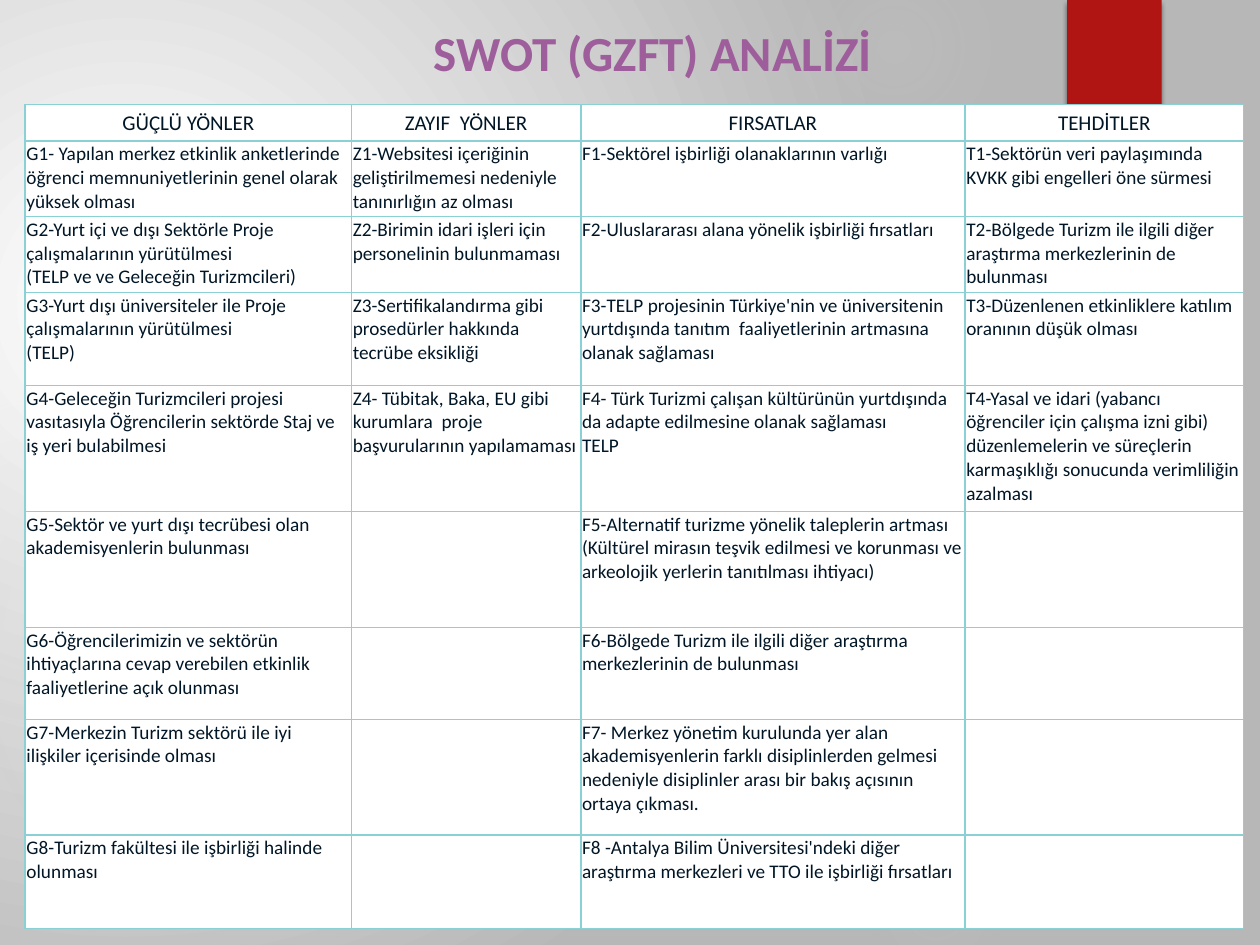
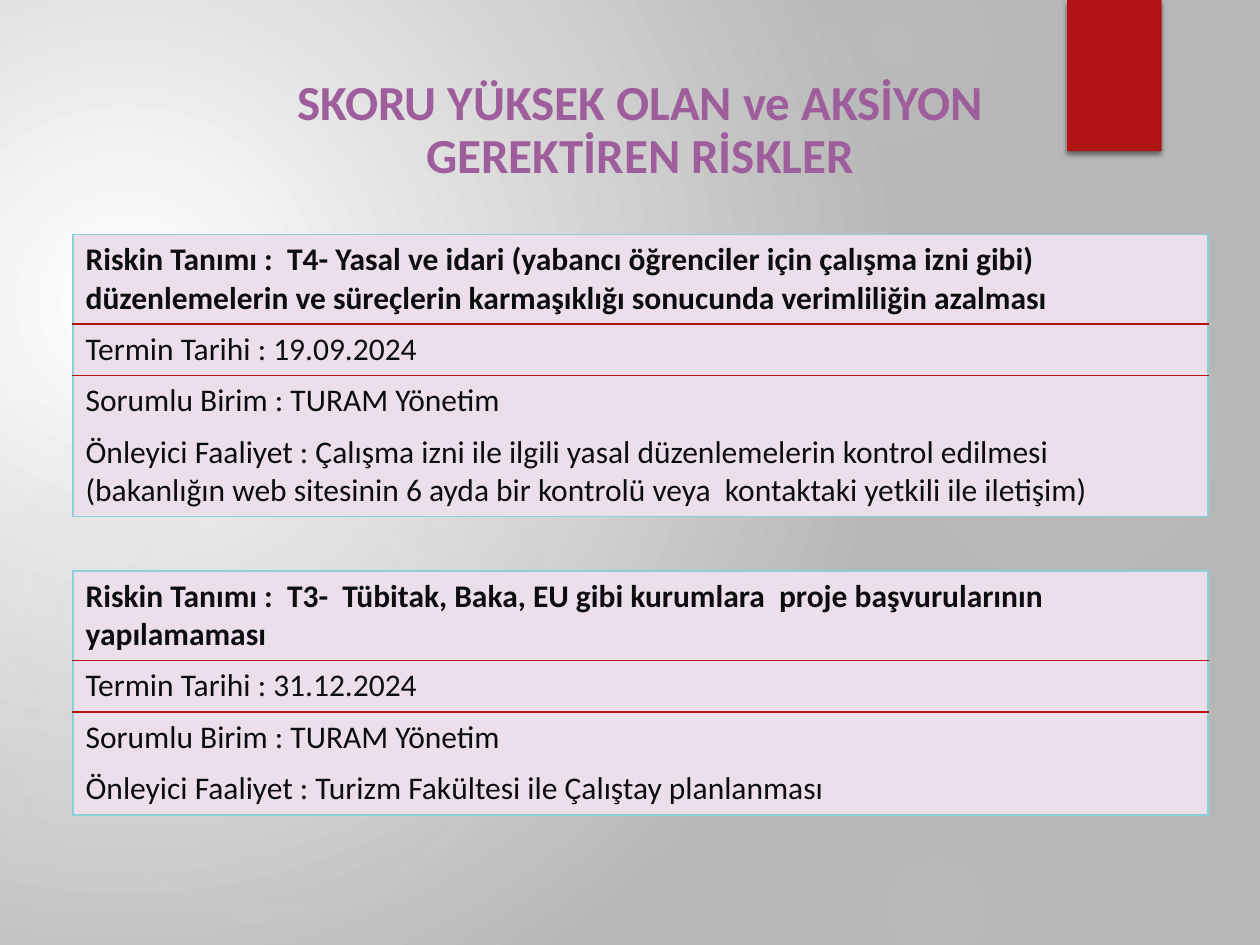
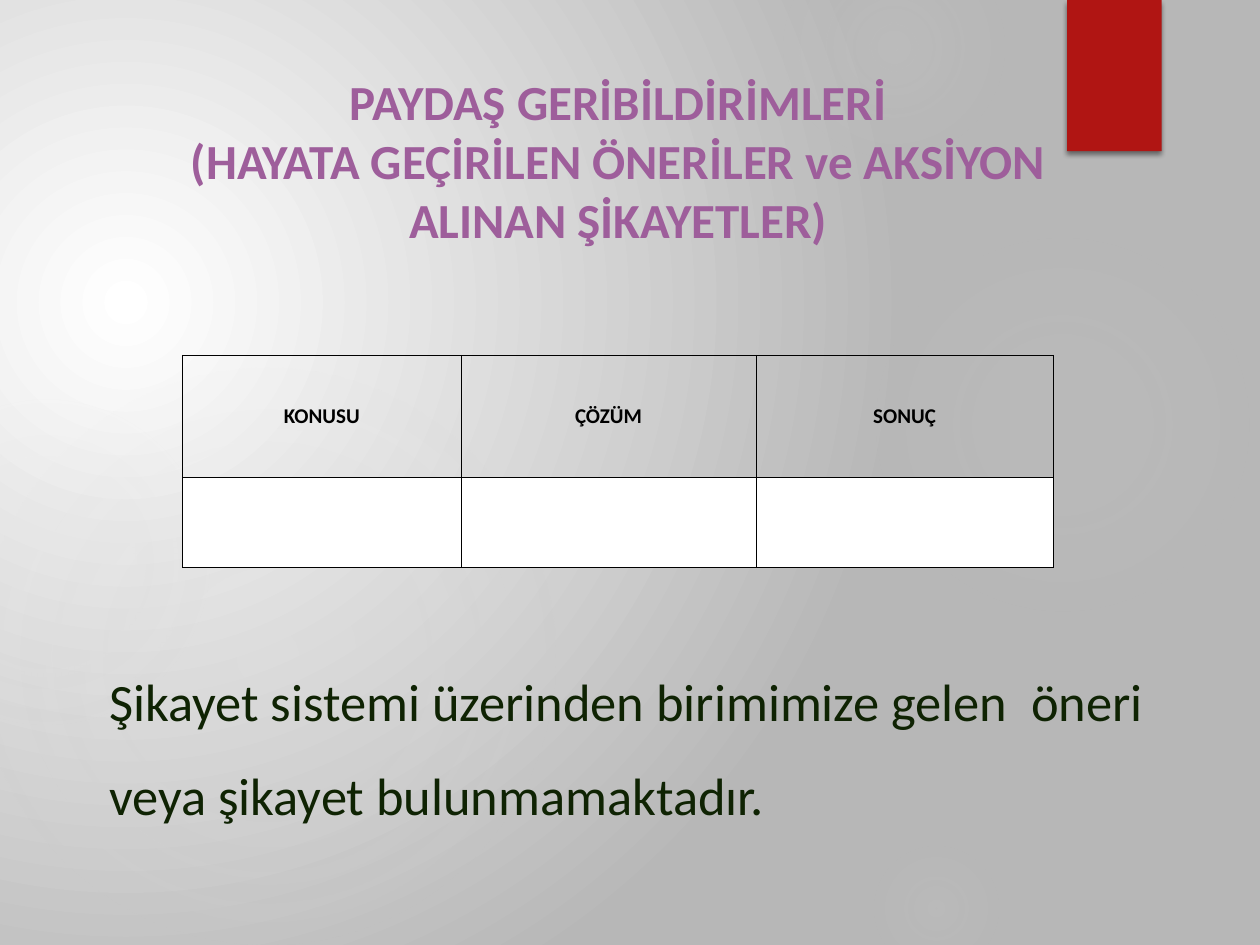
import pptx
import pptx.util
import pptx.dml.color
import pptx.enum.shapes
import pptx.enum.text
import pptx.oxml
from pptx.oxml.ns import nsdecls, qn

Inches, Pt = pptx.util.Inches, pptx.util.Pt
ANCHOR = pptx.enum.text.MSO_ANCHOR
ALIGN = pptx.enum.text.PP_ALIGN
SHAPE = pptx.enum.shapes.MSO_SHAPE

FONT = "Calibri"
PURPLE, RED, CYAN, LILAC = "9E5E9B", "B01513", "8AD0D5", "ECDFEB"
WHITE, BLACK, GREY, HALO = "FFFFFF", "000000", "B7B7B7", "D9D9D9"
NAVY, INK, GREEN = "001626", "0C0D0D", "0F2303"
NO_STYLE = "{2D5ABB26-0587-4C30-8999-92F81FD0307C}"

# left, top, diameter, stops as (position, opacity)
HALOS = [
    (6.89, 1.83, 3.08, [(0, 7), (36, 6), (69, 0)]),
    (6.22, -0.5, 1.75, [(0, 14), (36, 7), (73, 0)]),
    (6.89, 6.67, 1.08, [(0, 9), (36, 5), (66, 0)]),
    (-0.17, 2.92, 4.58, [(0, 11), (36, 10), (75, 0)]),
    (-0.92, 3.17, 2.58, [(0, 8), (36, 8), (72, 0)]),
]

SWOT_HEADS = ["GÜÇLÜ YÖNLER", "ZAYIF  YÖNLER", "FIRSATLAR", "TEHDİTLER"]
SWOT_COLUMNS = [
    ["G1- Yapılan merkez etkinlik anketlerinde öğrenci memnuniyetlerinin genel olarak yüksek olması",
     "G2-Yurt içi ve dışı Sektörle Proje çalışmalarının yürütülmesi\v(TELP ve ve Geleceğin Turizmcileri)",
     "G3-Yurt dışı üniversiteler ile Proje çalışmalarının yürütülmesi\v(TELP)",
     "G4-Geleceğin Turizmcileri projesi vasıtasıyla Öğrencilerin sektörde Staj ve iş yeri bulabilmesi",
     "G5-Sektör ve yurt dışı tecrübesi olan  akademisyenlerin bulunması",
     "G6-Öğrencilerimizin ve sektörün ihtiyaçlarına cevap verebilen etkinlik faaliyetlerine açık olunması",
     "G7-Merkezin Turizm sektörü ile iyi ilişkiler içerisinde olması",
     "G8-Turizm fakültesi ile işbirliği halinde olunması"],
    ["Z1-Websitesi içeriğinin geliştirilmemesi nedeniyle tanınırlığın az olması",
     "Z2-Birimin idari işleri için personelinin bulunmaması",
     "Z3-Sertifikalandırma gibi prosedürler hakkında tecrübe eksikliği",
     "Z4- Tübitak, Baka, EU gibi kurumlara  proje başvurularının yapılamaması"],
    ["F1-Sektörel işbirliği olanaklarının varlığı",
     "F2-Uluslararası alana yönelik işbirliği fırsatları",
     "F3-TELP projesinin Türkiye'nin ve üniversitenin yurtdışında tanıtım  faaliyetlerinin artmasına olanak sağlaması",
     "F4- Türk Turizmi çalışan kültürünün yurtdışında da adapte edilmesine olanak sağlaması\vTELP",
     "F5-Alternatif turizme yönelik taleplerin artması (Kültürel mirasın teşvik edilmesi ve korunması ve arkeolojik yerlerin tanıtılması ihtiyacı)",
     "F6-Bölgede Turizm ile ilgili diğer araştırma merkezlerinin de bulunması",
     "F7- Merkez yönetim kurulunda yer alan akademisyenlerin farklı disiplinlerden gelmesi nedeniyle disiplinler arası bir bakış açısının ortaya çıkması.",
     "F8 -Antalya Bilim Üniversitesi'ndeki diğer araştırma merkezleri ve TTO ile işbirliği fırsatları"],
    ["T1-Sektörün veri paylaşımında KVKK gibi engelleri öne sürmesi",
     "T2-Bölgede Turizm ile ilgili diğer araştırma merkezlerinin de bulunması",
     "T3-Düzenlenen etkinliklere katılım oranının düşük olması",
     "T4-Yasal ve idari (yabancı öğrenciler için çalışma izni gibi) düzenlemelerin ve süreçlerin karmaşıklığı sonucunda verimliliğin azalması"],
]


def rgb(color):
    return pptx.dml.color.RGBColor.from_string(color)


def style(p, size, color, bold=False, align=None):
    p.font.name, p.font.size, p.font.bold = FONT, Pt(size), bold
    p.font.color.rgb = rgb(color)
    p.alignment = align


def circle_gradient(solid, stops, rect):
    """Swap a solid fill for a circular gradient; stops are (position, colour, opacity)."""
    gs = "".join(
        f'<a:gs pos="{pos * 1000}"><a:srgbClr val="{color}">'
        f'<a:alpha val="{alpha * 1000}"/></a:srgbClr></a:gs>'
        for pos, color, alpha in stops)
    sides = " ".join(f'{side}="{v * 1000}"' for side, v in zip("ltrb", rect))
    solid.getparent().replace(solid, pptx.oxml.parse_xml(
        f'<a:gradFill rotWithShape="1" {nsdecls("a")}><a:gsLst>{gs}</a:gsLst>'
        f'<a:path path="circle"><a:fillToRect {sides}/></a:path></a:gradFill>'))


# Shared backdrop on the slide master
def plain_shape(s, kind, box, color):
    sp = s.shapes.add_shape(kind, *map(Inches, box))
    sp.shadow.inherit = False
    sp.fill.solid()
    sp.fill.fore_color.rgb = rgb(color)
    sp.line.fill.background()
    return sp


def build_master(prs, s):
    """Draw the backdrop on slide s and move it to the master."""
    master = prs.slide_master
    fill = master.background.fill
    fill.solid()
    fill.fore_color.rgb = rgb(GREY)
    bg = master._element.find(".//" + qn("p:bgPr"))
    circle_gradient(bg.find(qn("a:solidFill")),
                    [(0, WHITE, 100), (100, GREY, 100)], (45, 65, 125, 100))

    backdrop = []
    for left, top, size, stops in HALOS:
        sp = plain_shape(s, SHAPE.OVAL, (left, top, size, size), HALO)
        circle_gradient(sp._element.spPr.find(qn("a:solidFill")),
                        [(pos, HALO, alpha) for pos, alpha in stops], (50,) * 4)
        backdrop.append(sp)

    ribbon = plain_shape(s, SHAPE.RECTANGLE, (8.47, 0, 0.75, 1.2), RED)
    ribbon._element.spPr.find(qn("a:effectLst")).append(pptx.oxml.parse_xml(
        f'<a:outerShdw blurRad="{Pt(3)}" dist="{Pt(2)}" dir="5400000" rotWithShape="0" '
        f'{nsdecls("a")}><a:srgbClr val="{BLACK}"><a:alpha val="45000"/></a:srgbClr></a:outerShdw>'))
    backdrop.append(ribbon)

    tree = master.shapes[0]._element.getparent()
    for i, sp in enumerate(backdrop):
        sp._element.nvSpPr.cNvPr.set("id", str(100 + i))
        tree.insert(2 + i, sp._element)


def add_title(s, box, text, anchor=ANCHOR.TOP, spacing=None):
    title = s.shapes.title
    title.left, title.top, title.width, title.height = map(Inches, box)
    tf = title.text_frame
    tf.text = text
    tf.word_wrap = True
    tf.auto_size = pptx.enum.text.MSO_AUTO_SIZE.NONE
    tf.vertical_anchor = anchor
    for p in tf.paragraphs:
        style(p, 28, PURPLE, True, ALIGN.CENTER)
        p.line_spacing = spacing


# Tables
def add_table(s, left, top, cols, rows):
    frame = s.shapes.add_table(len(rows), len(cols), Inches(left), Inches(top),
                               Inches(sum(cols)), Inches(sum(rows)))
    table = frame.table
    table.first_row = table.horz_banding = False
    table._tbl.tblPr.find(qn("a:tableStyleId")).text = NO_STYLE
    for col, width in zip(table.columns, cols):
        col.width = Inches(width)
    for row, height in zip(table.rows, rows):
        row.height = Inches(height)
    return table


def format_cell(cell, borders, width, fill=None):
    """borders maps sides L, R, T, B to colours."""
    tcPr = cell._tc.get_or_add_tcPr()
    for side in "LRTB":
        if side in borders:
            tcPr.append(pptx.oxml.parse_xml(
                f'<a:ln{side} w="{Pt(width)}" {nsdecls("a")}><a:solidFill>'
                f'<a:srgbClr val="{borders[side]}"/></a:solidFill></a:ln{side}>'))
    if fill:
        cell.fill.solid()
        cell.fill.fore_color.rgb = rgb(fill)
    else:
        cell.fill.background()


def write_cell(cell, text, size, color, bold=False, align=None):
    cell.text = text
    style(cell.text_frame.paragraphs[0], size, color, bold, align)


def set_margins(cell, side, bottom=0):
    cell.margin_left = cell.margin_right = cell.margin_top = Inches(side)
    cell.margin_bottom = Inches(bottom)


def swot_table(s, left, top):
    table = add_table(s, left, top, [2.59, 1.82, 3.05, 2.21],
                      [0.29, 0.6, 0.6, 0.74, 1, 0.92, 0.73, 0.92, 0.74])
    for cell in table.iter_cells():
        format_cell(cell, dict.fromkeys("LRTB", CYAN), 1, WHITE)
        set_margins(cell, 0.01)
    for c, (head, items) in enumerate(zip(SWOT_HEADS, SWOT_COLUMNS)):
        write_cell(table.cell(0, c), head, 12, NAVY, align=ALIGN.CENTER)
        table.cell(0, c).vertical_anchor = ANCHOR.MIDDLE
        for r, item in enumerate(items, 1):
            write_cell(table.cell(r, c), item, 11, NAVY)


def risk_table(s, left, top, last_height, risk, due, action):
    table = add_table(s, left, top, [8.77, 0.23], [0.71, 0.41, 0.41, last_height])
    lines = [f"Riskin Tanımı :  {risk}", f"Termin Tarihi : {due}",
             "Sorumlu Birim : TURAM Yönetim", f"Önleyici Faaliyet : {action}"]
    for r, line in enumerate(lines):
        write_cell(table.cell(r, 0), line, 18, INK, bold=r == 0)
        for c, side in enumerate("LR"):
            borders = {side: CYAN}
            if r == 0:
                borders.update(T=CYAN, B=RED)
            elif r == 1:
                borders["T"] = RED
            elif r == len(lines) - 1:
                borders["B"] = CYAN
            format_cell(table.cell(r, c), borders, 1, LILAC)


def feedback_table(s, left, top):
    table = add_table(s, left, top, [2.21, 2.34, 2.36], [0.97, 0.71])
    for c, head in enumerate(["KONUSU", "ÇÖZÜM", "SONUÇ"]):
        for r, fill in enumerate([None, WHITE]):
            format_cell(table.cell(r, c), dict.fromkeys("LRTB", BLACK), 0.5, fill)
        cell = table.cell(0, c)
        write_cell(cell, head, 12, BLACK, True, ALIGN.CENTER)
        cell.vertical_anchor = ANCHOR.MIDDLE
        set_margins(cell, 0)


# Slides
def swot_slide(s):
    add_title(s, (2.77, 0.13, 4.82, 0.57), "SWOT (GZFT) ANALİZİ")
    swot_table(s, 0.2, 0.83)


def risk_slide(s):
    add_title(s, (2.2, 0.58, 5.76, 0.93),
              "SKORU YÜKSEK OLAN ve AKSİYON GEREKTİREN RİSKLER", ANCHOR.BOTTOM, 0.9)
    s.shapes.title.text_frame.paragraphs[0].space_after = Pt(6)
    risk_table(s, 0.58, 1.86, 0.71,
               "T4- Yasal ve idari (yabancı öğrenciler için çalışma izni gibi) "
               "düzenlemelerin ve süreçlerin karmaşıklığı sonucunda verimliliğin azalması",
               "19.09.2024",
               "Çalışma izni ile ilgili yasal düzenlemelerin kontrol edilmesi "
               "(bakanlığın web sitesinin 6 ayda bir kontrolü veya  kontaktaki yetkili ile iletişim)")
    risk_table(s, 0.58, 4.53, 0.41,
               "T3-  Tübitak, Baka, EU gibi kurumlara  proje başvurularının yapılamaması",
               "31.12.2024", "Turizm Fakültesi ile Çalıştay planlanması")


def feedback_slide(s):
    add_title(s, (0.9, 0.52, 8.01, 1.51),
              "PAYDAŞ GERİBİLDİRİMLERİ\n(HAYATA GEÇİRİLEN ÖNERİLER ve AKSİYON ALINAN ŞİKAYETLER)")
    feedback_table(s, 1.45, 2.82)
    tf = s.shapes.add_textbox(*map(Inches, (0.77, 5.01, 8.79, 1.62))).text_frame
    tf.word_wrap = True
    tf.text = "Şikayet sistemi üzerinden birimimize gelen  öneri veya şikayet bulunmamaktadır."
    p = tf.paragraphs[0]
    style(p, 30, GREEN)
    p.line_spacing = 1.5


def main():
    prs = pptx.Presentation()
    prs.slide_width, prs.slide_height = Inches(10), Inches(7.5)
    slides = [prs.slides.add_slide(prs.slide_layouts[5]) for _ in range(3)]
    build_master(prs, slides[0])
    for build, s in zip([swot_slide, risk_slide, feedback_slide], slides):
        build(s)
    prs.save("out.pptx")


if __name__ == "__main__":
    main()
